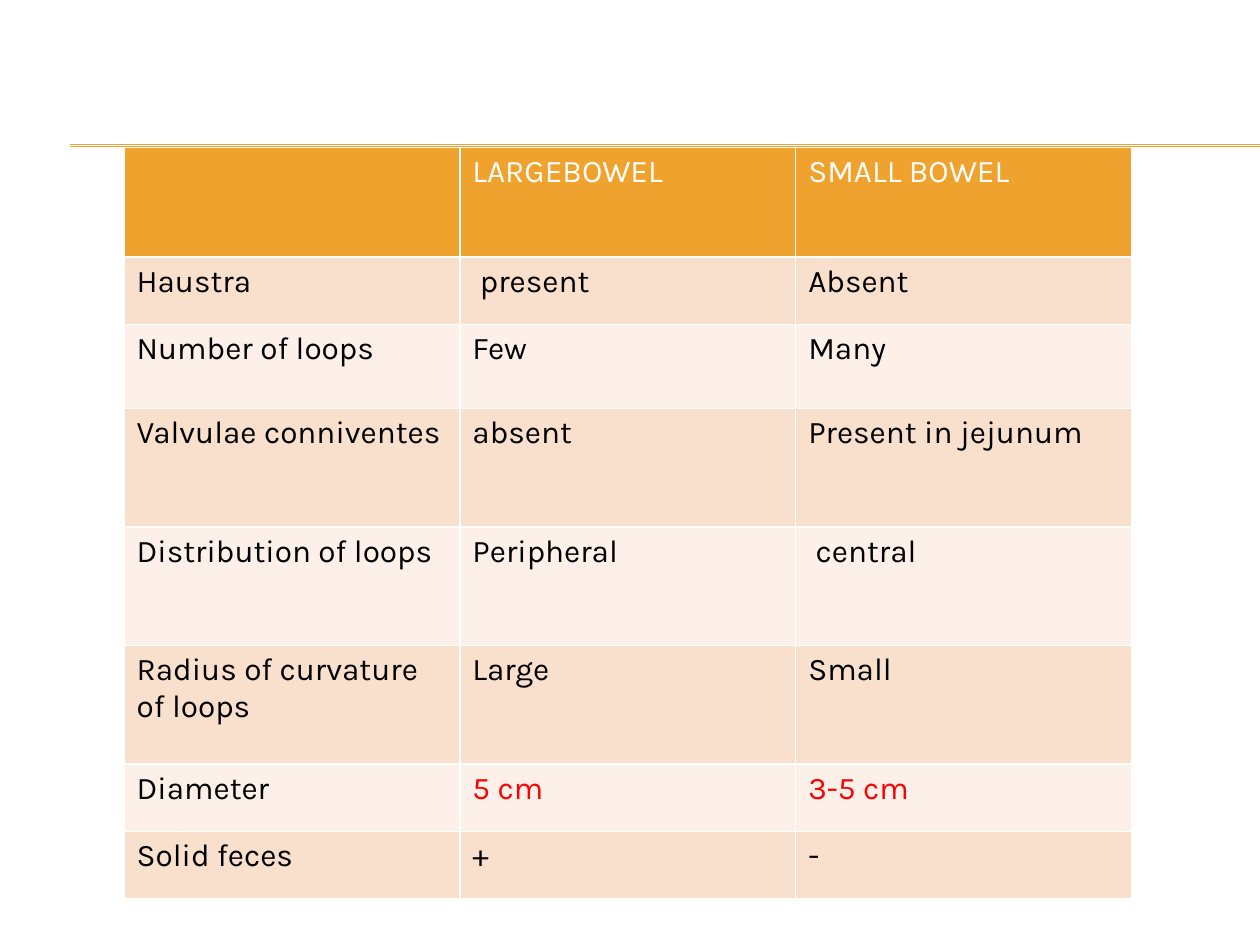
"""Build a slide with a table comparing large and small bowel."""
from lxml import etree
from pptx import Presentation
from pptx import util as u
from pptx.dml.color import RGBColor
from pptx.enum import shapes, text
from pptx.oxml import ns

COLORS = {"accent": "F0A22E", "odd": "F9E0CD", "even": "FCF0E8",
          "white": "FFFFFF", "black": "000000", "red": "FF0000"}
ROWS = [
    (2.21, ("", "LARGEBOWEL", "SMALL BOWEL")),
    (1.36, ("Haustra", " present", "Absent")),
    (1.69, ("Number of loops", "Few", "Many")),
    (2.39, ("Valvulae conniventes", "absent", "Present in jejunum")),
    (2.39, ("Distribution of loops", "Peripheral", " central")),
    (2.39, ("Radius of curvature of loops", "Large", "Small")),
    (1.36, ("Diameter", "5 cm", "3-5 cm")),
    (1.36, ("Solid feces", "+", "-")),
]
RED_VALUES = ("5 cm", "3-5 cm")
RULE_HEIGHTS = (2.92, 2.95)
RULE_LEFT, SLIDE_WIDTH, SLIDE_HEIGHT = 1.42, 25.4, 19.05
TABLE_LEFT, TABLE_TOP, COLUMN_WIDTH = 2.5, 2.97, 6.77


def rgb(name):
    return RGBColor.from_string(COLORS[name])


def write(frame, content, *, color="black", size=18, font="Karla"):
    paragraph = frame.paragraphs[0]
    paragraph.alignment = text.PP_ALIGN.LEFT
    paragraph.font.size = u.Pt(size)
    if content:
        run = paragraph.add_run()
        run.text = content
        run.font.name = font
        run.font.size = u.Pt(size)
        run.font.bold = False
        run.font.color.rgb = rgb(color)


def add_rule(slide, top):
    rule = slide.shapes.add_connector(
        shapes.MSO_CONNECTOR.STRAIGHT,
        u.Cm(RULE_LEFT), u.Cm(top), u.Cm(SLIDE_WIDTH), u.Cm(top))
    rule.line.color.rgb = rgb("accent")
    rule.line.width = u.Pt(0.75)
    etree.SubElement(rule.element.spPr, ns.qn("a:effectLst"))


def style_cell(cell, fill):
    properties = cell._tc.get_or_add_tcPr()
    for side in ("lnL", "lnR", "lnT", "lnB"):
        border = etree.SubElement(properties, ns.qn(f"a:{side}"), w=str(u.Pt(1)))
        solid = etree.SubElement(border, ns.qn("a:solidFill"))
        etree.SubElement(solid, ns.qn("a:srgbClr"), val=COLORS["white"])
    cell.fill.solid()
    cell.fill.fore_color.rgb = rgb(fill)


def add_comparison(slide):
    column_count = len(ROWS[0][1])
    table = slide.shapes.add_table(
        len(ROWS), column_count, u.Cm(TABLE_LEFT), u.Cm(TABLE_TOP),
        u.Cm(COLUMN_WIDTH * column_count),
        u.Cm(sum(height for height, _ in ROWS))).table
    for column in table.columns:
        column.width = u.Cm(COLUMN_WIDTH)
    for row_index, (height, values) in enumerate(ROWS):
        table.rows[row_index].height = u.Cm(height)
        fill = "accent" if row_index == 0 else ("even", "odd")[row_index % 2]
        for column_index, value in enumerate(values):
            cell = table.cell(row_index, column_index)
            style_cell(cell, fill)
            color = "white" if row_index == 0 else "red" if value in RED_VALUES else "black"
            write(cell.text_frame, value, color=color)


def main():
    presentation = Presentation()
    presentation.slide_width = u.Cm(SLIDE_WIDTH)
    presentation.slide_height = u.Cm(SLIDE_HEIGHT)
    slide = presentation.slides.add_slide(presentation.slide_layouts[6])
    for top in RULE_HEIGHTS:
        add_rule(slide, top)
    add_comparison(slide)
    presentation.save("out.pptx")


if __name__ == "__main__":
    main()
